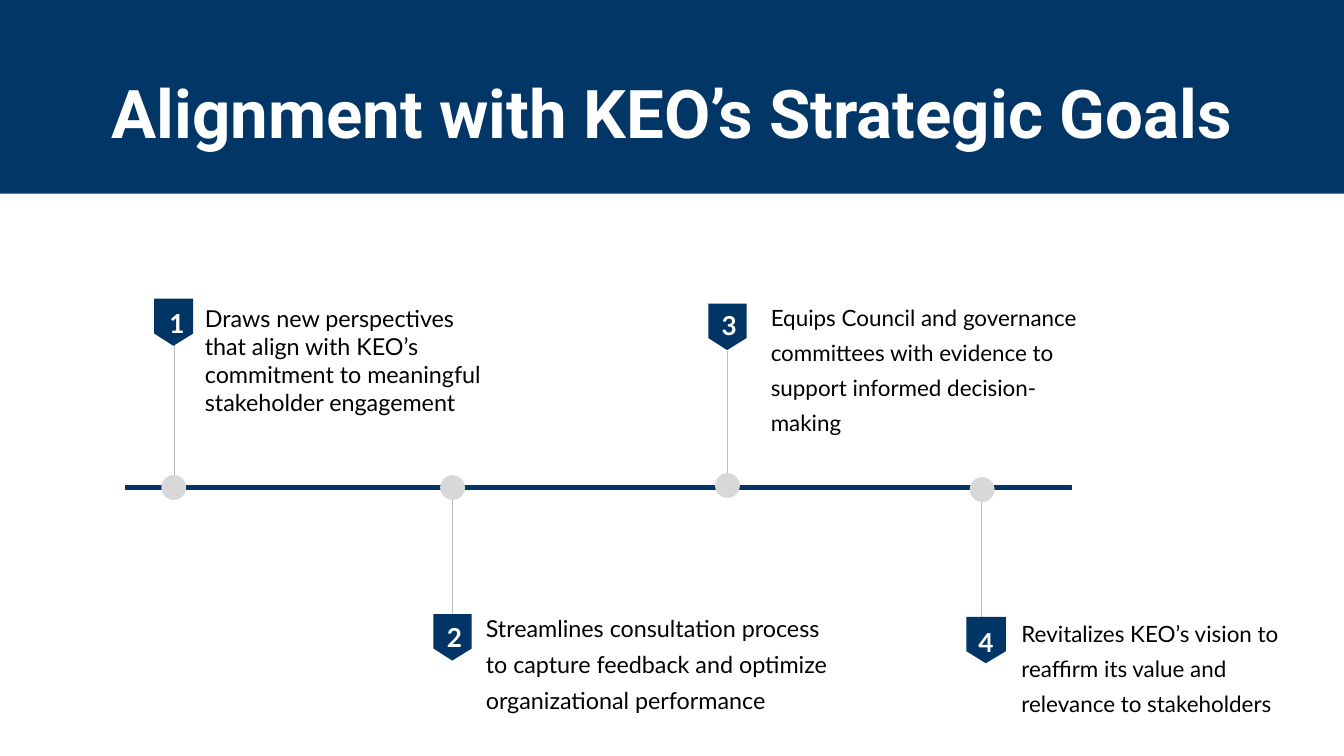
import pptx
import pptx.util
from pptx.dml.color import RGBColor
from pptx.enum.shapes import MSO_CONNECTOR, MSO_SHAPE
from pptx.enum.text import MSO_ANCHOR, MSO_AUTO_SIZE, PP_ALIGN
from pptx.oxml.ns import qn
from lxml import etree

PX = 9144  # EMU per px, 100 px to the inch
BAND, NAVY, GREY, DOT = "013667", "003566", "B5BBBF", "D8D8D8"
WHITE, BLACK = "FFFFFF", "000000"
DOT_SIZE = 37

# badge: left, top, width; stem: x, top, length; dot: left, top
MILESTONES = [
    dict(number="1", badge=(230, 445, 57), outline=NAVY, stem=(259, 504), dot=(240, 707),
         digit=(252, 443, 23, 48), box=(295, 448, 448, 178),
         text="Draws new perspectives that align with KEO’s commitment to meaningful "
              "stakeholder engagement",
         style=dict(size=25, spacing=None, insets=(10, 5))),
    dict(number="2", badge=(645, 914, 57), outline=None, stem=(673, 727), dot=(655, 707),
         digit=(665, 911, 23, 48), box=(723, 901, 517, 164),
         text="Streamlines consultation process to capture feedback and optimize "
              "organizational performance",
         style=dict(size=25)),
    dict(number="3", badge=(1054, 452, 57), outline=None, stem=(1082, 523), dot=(1064, 704),
         digit=(1074, 447, 23, 48), box=(1147, 441, 494, 158),
         text="Equips Council and governance committees with evidence to support "
              "informed decision-making",
         style=dict(size=24)),
    dict(number="4", badge=(1438, 918, 59), outline=None, stem=(1461, 743), dot=(1443, 710),
         digit=(1456, 918, 24, 61), box=(1520, 911, 405, 188),
         text="Revitalizes KEO’s vision to reaffirm its value and relevance to "
              "stakeholders",
         style=dict(size=24)),
]
STEM_LENGTH = 203


def emu(*lengths):
    return [pptx.util.Emu(n * PX) for n in lengths]


def rgb(color):
    return RGBColor.from_string(color)


def paint(sp, fill, outline=None):
    sp.shadow.inherit = False
    sp.fill.solid()
    sp.fill.fore_color.rgb = rgb(fill)
    if outline:
        sp.line.color.rgb = rgb(outline)
        sp.line.width = pptx.util.Pt(0.75)
    else:
        sp.line.fill.background()
    return sp


def add_preset(s, preset, at, fill, outline=None):
    return paint(s.shapes.add_shape(preset, *emu(*at)), fill, outline)


def add_badge(s, left, top, width, outline):
    """Flat-topped tag with a point in the middle of its lower edge."""
    right, shoulder, tip = left + width, top + 51, top + 69
    builder = s.shapes.build_freeform(left, top, scale=PX)
    builder.add_line_segments([(left, shoulder), (left + width // 2, tip),
                               (right, shoulder), (right, top)], close=True)
    return paint(builder.convert_to_shape(), NAVY, outline)


def add_stem(s, x, top):
    line = s.shapes.add_connector(MSO_CONNECTOR.STRAIGHT, *emu(x, top, x, top + STEM_LENGTH))
    line.line.color.rgb = rgb(GREY)
    line.line.width = pptx.util.Pt(1)
    etree.SubElement(line.element.spPr, qn("a:effectLst"))


def write(sp, text, size, font="Lato", color=BLACK, bold=False, align=PP_ALIGN.LEFT,
          spacing=1.3, insets=(0, 0), wrap=True):
    tf = sp.text_frame
    tf.auto_size = MSO_AUTO_SIZE.NONE
    tf.word_wrap = wrap
    tf.vertical_anchor = MSO_ANCHOR.TOP
    tf.margin_left = tf.margin_right = emu(insets[0])[0]
    tf.margin_top = tf.margin_bottom = emu(insets[1])[0]
    p = tf.paragraphs[0]
    p.alignment = align
    if spacing:
        p.line_spacing = spacing
    r = p.add_run()
    r.text = text
    r.font.size = pptx.util.Pt(size)
    r.font.name = font
    r.font.bold = bold
    r.font.color.rgb = rgb(color)


def add_text(s, at, text, **style):
    write(s.shapes.add_textbox(*emu(*at)), text, **style)


def add_header(s):
    title = s.shapes.title
    title.left, title.top, title.width, title.height = emu(0, 82, 2000, 145)
    write(title, "Alignment with KEO’s Strategic Goals", 72, font="Roboto", color=WHITE,
          bold=True, align=PP_ALIGN.CENTER, spacing=1.2)
    band = add_preset(s, MSO_SHAPE.RECTANGLE, (0, 0, 2000, 288), BAND)
    title.element.addprevious(band.element)  # the band lies behind the title


def add_milestone(s, m):
    add_stem(s, *m["stem"])
    add_badge(s, *m["badge"], m["outline"])
    add_text(s, m["digit"], m["number"], size=28, color=WHITE, bold=True, wrap=False)
    add_text(s, m["box"], m["text"], **m["style"])
    add_preset(s, MSO_SHAPE.OVAL, (*m["dot"], DOT_SIZE, DOT_SIZE), DOT)


def main():
    prs = pptx.Presentation()
    prs.slide_width, prs.slide_height = emu(2000, 1125)
    s = prs.slides.add_slide(prs.slide_layouts.get_by_name("Title Only"))
    add_header(s)
    add_preset(s, MSO_SHAPE.RECTANGLE, (187, 723, 1407, 6), NAVY, NAVY)
    for m in MILESTONES:
        add_milestone(s, m)
    prs.save("out.pptx")


if __name__ == "__main__":
    main()
